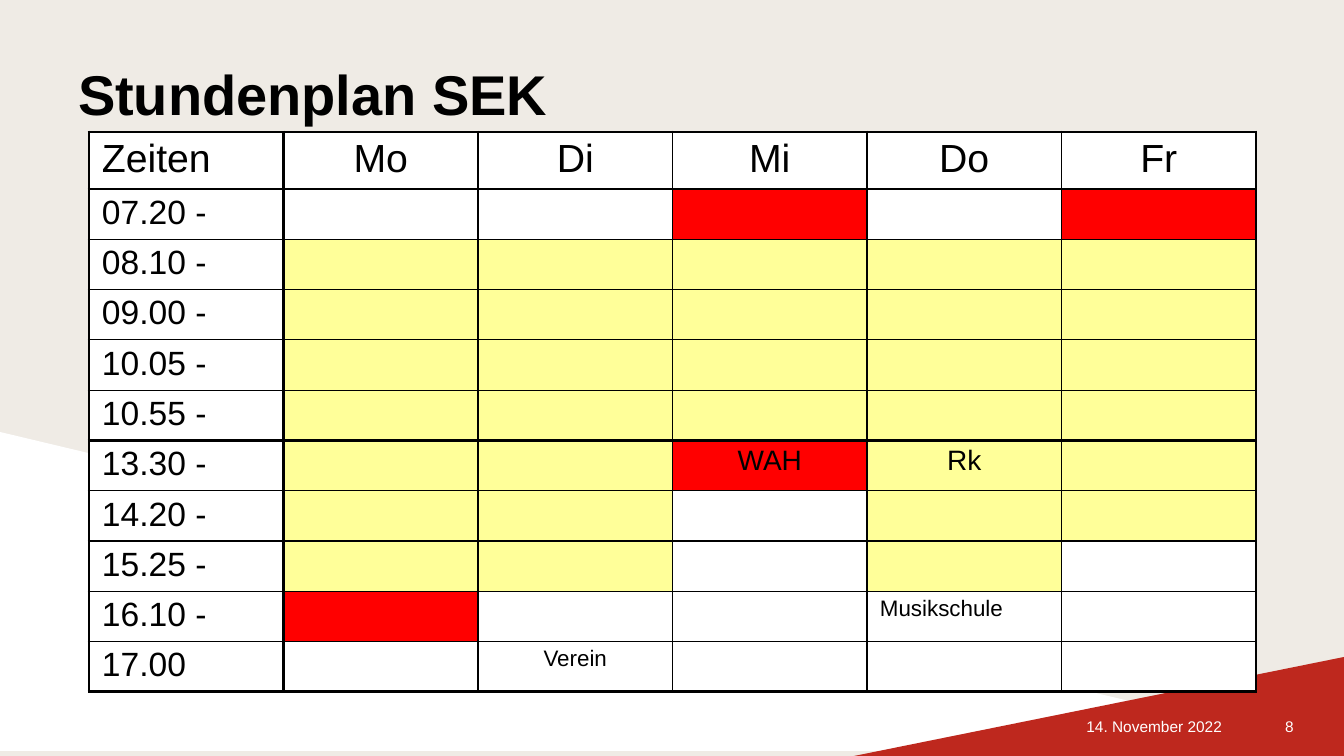
"""Build the weekly timetable slide for the secondary school."""
from lxml.etree import SubElement
from pptx import Presentation
from pptx.dml.color import RGBColor
from pptx.enum.shapes import MSO_SHAPE
from pptx.enum.text import MSO_ANCHOR, PP_ALIGN
from pptx.oxml.ns import qn
from pptx.util import Emu, Pt

PX = 914400 / 100.8
FILLS = {"w": "FFFFFF", "y": "FFFF99", "r": "FF0000"}
DAYS = ["Mo", "Di", "Mi", "Do", "Fr"]
LESSONS = [
    ("07.20 -", "wwrwr"),
    ("08.10 -", "yyyyy"),
    ("09.00 -", "yyyyy"),
    ("10.05 -", "yyyyy"),
    ("10.55 -", "yyyyy"),
    ("13.30 -", "yyryy"),
    ("14.20 -", "yywyy"),
    ("15.25 -", "yywyw"),
    ("16.10 -", "rwwww"),
    ("17.00", "wwwww"),
]
ENTRIES = {
    (6, 3): ("WAH", 20, PP_ALIGN.CENTER),
    (6, 4): ("Rk", 20, PP_ALIGN.CENTER),
    (9, 4): ("Musikschule", 16, PP_ALIGN.LEFT),
    (10, 2): ("Verein", 16, PP_ALIGN.CENTER),
}
THICK_ROWS = {0, 1, 6, 11}
THICK_COLS = {0, 1, 6}


def px(*values):
    return [Emu(round(v * PX)) for v in values]


def write(tf, text, size, color, align):
    p = tf.paragraphs[0]
    p.text = text
    p.alignment = align
    p.font.name = "Arial"
    p.font.size = Pt(size)
    p.font.color.rgb = RGBColor.from_string(color)
    return p


prs = Presentation()
prs.slide_width, prs.slide_height = px(1344, 756)
s = prs.slides.add_slide(prs.slide_layouts[5])
s.background.fill.solid()
s.background.fill.fore_color.rgb = RGBColor.from_string("EFEBE5")

for box, color, flip in [
    ((0, 432, 1339, 319), "FFFFFF", "0"),
    ((854, 657, 490, 99), "BE281E", "1"),
]:
    sp = s.shapes.add_shape(MSO_SHAPE.RIGHT_TRIANGLE, *px(*box))
    sp.shadow.inherit = False
    sp.fill.solid()
    sp.fill.fore_color.rgb = RGBColor.from_string(color)
    sp.line.fill.background()
    sp._element.spPr.find(qn("a:xfrm")).set("flipH", flip)

for box, text, align in [
    ((871, 706, 361, 40), "14. November 2022", PP_ALIGN.RIGHT),
    ((1254, 706, 71, 40), "8", PP_ALIGN.CENTER),
]:
    tf = s.shapes.add_textbox(*px(*box)).text_frame
    tf.word_wrap = True
    tf.vertical_anchor = MSO_ANCHOR.MIDDLE
    write(tf, text, 11, "FFFFFF", align)

title = s.shapes.title
title.left, title.top, title.width, title.height = px(68, 30, 1210, 126)
title.text_frame.vertical_anchor = MSO_ANCHOR.MIDDLE
write(title.text_frame, "Stundenplan SEK", 40, "000000", PP_ALIGN.LEFT).font.bold = True

table = s.shapes.add_table(11, 6, *px(89, 132, 1167, 534)).table
table.first_row = table.horz_banding = False
for row in table.rows:
    row.height = px(48)[0]
table.rows[0].height = px(54)[0]

texts = {(0, 0): ("Zeiten", 28, PP_ALIGN.LEFT), **ENTRIES}
for c, day in enumerate(DAYS, 1):
    texts[0, c] = (day, 28, PP_ALIGN.CENTER)
for r, (time, _) in enumerate(LESSONS, 1):
    texts[r, 0] = (time, 24, PP_ALIGN.LEFT)
colors = ["wwwwww"] + ["w" + fills for _, fills in LESSONS]

for r in range(11):
    for c in range(6):
        cell = table.cell(r, c)
        cell.margin_left, cell.margin_right, cell.margin_top, cell.margin_bottom = px(13, 13, 5, 5)
        tcPr = cell._tc.get_or_add_tcPr()
        for side, thick in [
            ("L", c in THICK_COLS),
            ("R", c + 1 in THICK_COLS),
            ("T", r in THICK_ROWS),
            ("B", r + 1 in THICK_ROWS),
        ]:
            ln = SubElement(tcPr, qn(f"a:ln{side}"), w=str(Pt(2.25 if thick else 1)))
            SubElement(SubElement(ln, qn("a:solidFill")), qn("a:srgbClr"), val="000000")
        cell.fill.solid()
        cell.fill.fore_color.rgb = RGBColor.from_string(FILLS[colors[r][c]])
        if (r, c) in texts:
            text, size, align = texts[r, c]
            write(cell.text_frame, text, size, "000000", align)

prs.save("out.pptx")
